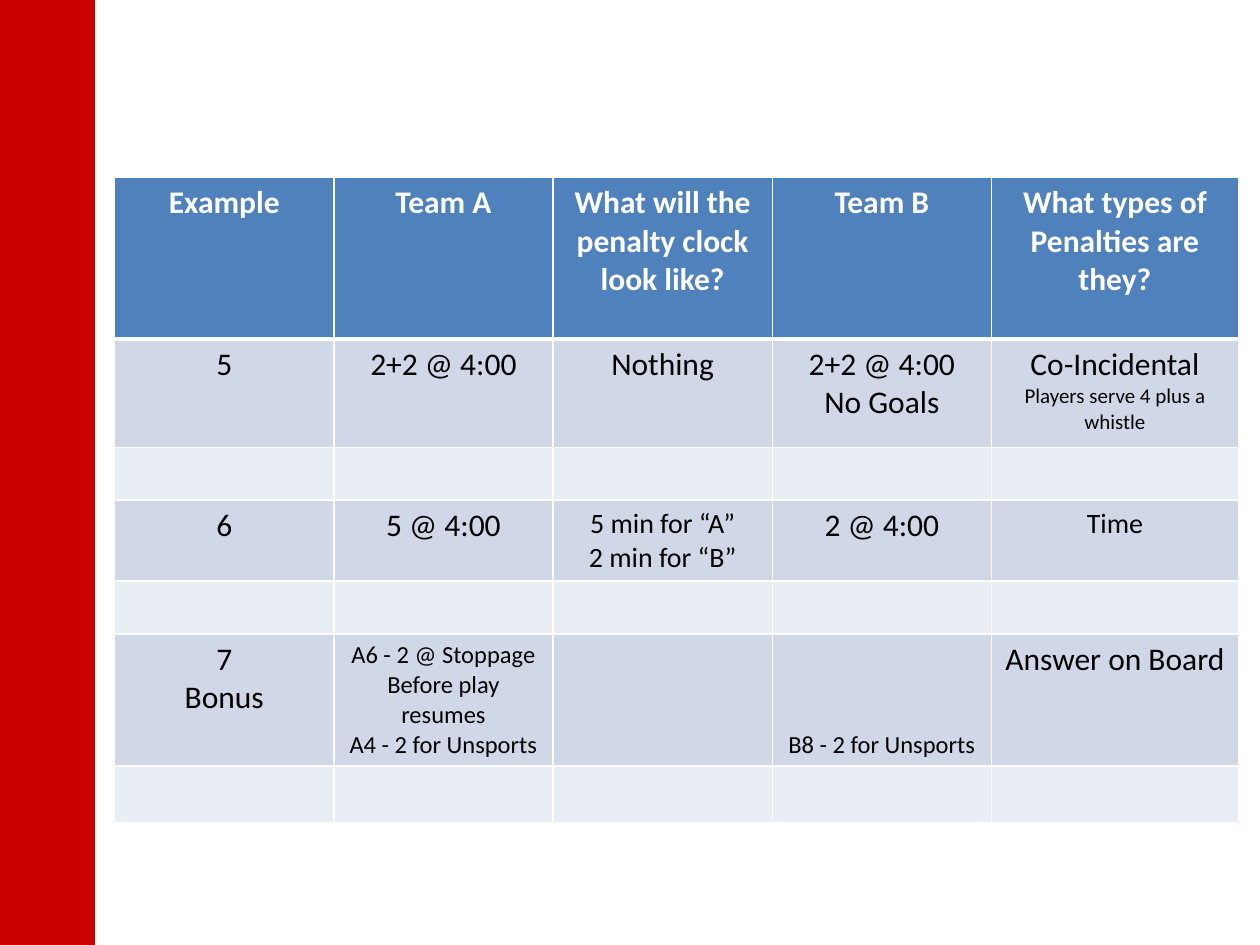
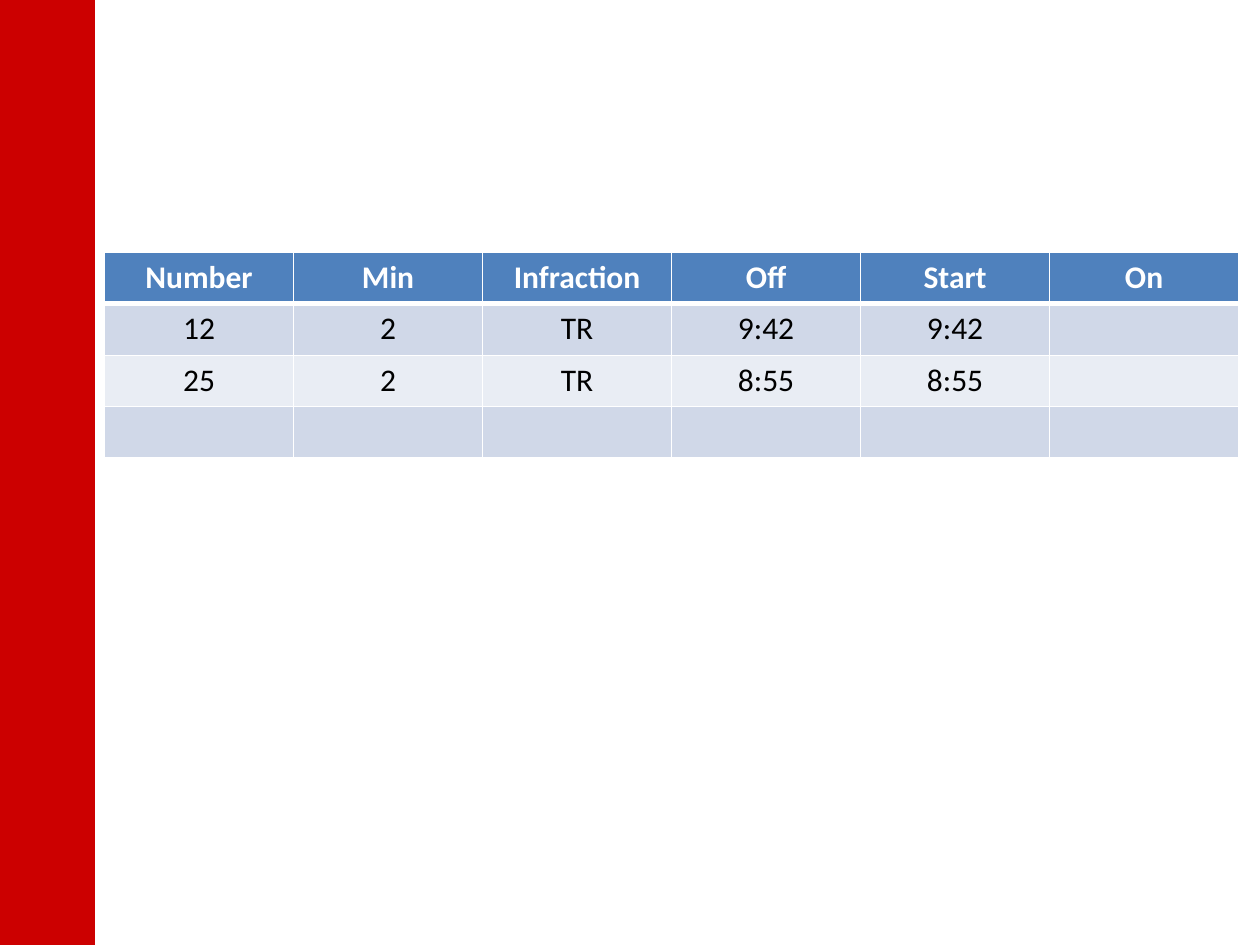
from lxml import etree
from pptx import Presentation
from pptx.dml.color import RGBColor
from pptx.enum.shapes import MSO_SHAPE
from pptx.enum.text import MSO_ANCHOR, PP_ALIGN
from pptx.oxml.ns import qn
from pptx.util import Inches, Pt

RED = RGBColor(0xCC, 0x00, 0x00)
HEADER = RGBColor(0x4F, 0x81, 0xBD)
DARK_ROW = RGBColor(0xD0, 0xD8, 0xE8)
LIGHT_ROW = RGBColor(0xE9, 0xED, 0xF4)
WHITE = RGBColor(0xFF, 0xFF, 0xFF)
BLACK = RGBColor(0x00, 0x00, 0x00)
FONT = "Calibri"
BODY_SIZE = 18
BAND_BOX = (0, 0, 0.75, 7.5)

PENALTY_BOX = (0.91, 1.41, 8.92, 5.1)
PENALTY_COLS = [1.74] * 4 + [1.96]
PENALTY_ROWS = [1.28, 0.86, 0.42, 0.64, 0.42, 1.04, 0.45]
PENALTIES = [
    ["Example", "Team A", "What will the penalty clock look like?", "Team B",
     "What types of Penalties are they?"],
    ["5", "2+2 @ 4:00", "Nothing", "2+2 @ 4:00\nNo Goals",
     [("Co-Incidental", 18), ("Players serve 4 plus a whistle", 12)]],
    [""] * 5,
    ["6", "5 @ 4:00", [("5 min for “A”", 16), ("2 min for “B”", 16)],
     "2 @ 4:00", [("Time", 16)]],
    [""] * 5,
    ["7\nBonus",
     [("A6 - 2 @ Stoppage", 14), ("Before play resumes", 14), ("A4 - 2 for Unsports", 14)],
     "", [("B8 - 2 for Unsports", 14)], "Answer on Board"],
    [""] * 5,
]

CLOCK_BOX = (0.83, 2, 9, 1.62)
CLOCK_COLS = [1.5] * 6
CLOCK_ROWS = [0.41, 0.41, 0.4, 0.4]
CLOCK = [
    ["Number", "Min", "Infraction", "Off", "Start", "On"],
    ["12", "2", "TR", "9:42", "9:42", ""],
    ["25", "2", "TR", "8:55", "8:55", ""],
    [""] * 6,
]


def add_band(slide, box):
    sp = slide.shapes.add_shape(MSO_SHAPE.RECTANGLE, *map(Inches, box))
    sp.shadow.inherit = False
    sp.fill.solid()
    sp.fill.fore_color.rgb = RED
    sp.line.color.rgb = RED
    sp.line.width = Pt(0.75)


def set_borders(cell, top, bottom):
    tc_pr = cell._tc.get_or_add_tcPr()
    widths = {"lnL": 1, "lnR": 1, "lnT": top, "lnB": bottom}
    for i, (tag, width) in enumerate(widths.items()):
        ln = etree.Element(qn(f"a:{tag}"), w=str(Pt(width)))
        fill = etree.SubElement(ln, qn("a:solidFill"))
        etree.SubElement(fill, qn("a:srgbClr"), val=str(WHITE))
        tc_pr.insert(i, ln)


def fill_cell(cell, content, is_header):
    if isinstance(content, str):
        content = [(line, BODY_SIZE) for line in content.split("\n")]
    tf = cell.text_frame
    tf.text = "\n".join(text for text, size in content)
    for p, (text, size) in zip(tf.paragraphs, content):
        p.alignment = PP_ALIGN.CENTER
        for r in p.runs:
            r.font.name = FONT
            r.font.size = Pt(size)
            r.font.bold = is_header
            r.font.color.rgb = WHITE if is_header else BLACK


def add_grid(slide, box, cols, rows, data):
    frame = slide.shapes.add_table(len(rows), len(cols), *map(Inches, box))
    table = frame.table
    for column, width in zip(table.columns, cols):
        column.width = Inches(width)
    for i, (row, height) in enumerate(zip(table.rows, rows)):
        row.height = Inches(height)
        color = HEADER if i == 0 else DARK_ROW if i % 2 else LIGHT_ROW
        for cell, content in zip(row.cells, data[i]):
            cell.fill.solid()
            cell.fill.fore_color.rgb = color
            set_borders(cell, 3 if i == 1 else 1, 3 if i == 0 else 1)
            fill_cell(cell, content, i == 0)
    return table


def add_banded_slide(prs):
    slide = prs.slides.add_slide(prs.slide_layouts[6])
    add_band(slide, BAND_BOX)
    return slide


def add_penalty_slide(prs):
    slide = add_banded_slide(prs)
    table = add_grid(slide, PENALTY_BOX, PENALTY_COLS, PENALTY_ROWS, PENALTIES)
    table.cell(5, 3).vertical_anchor = MSO_ANCHOR.BOTTOM


def add_clock_slide(prs):
    slide = add_banded_slide(prs)
    add_grid(slide, CLOCK_BOX, CLOCK_COLS, CLOCK_ROWS, CLOCK)


def main():
    prs = Presentation()
    prs.slide_width, prs.slide_height = Inches(10), Inches(7.5)
    add_penalty_slide(prs)
    add_clock_slide(prs)
    prs.save("out.pptx")


if __name__ == "__main__":
    main()
